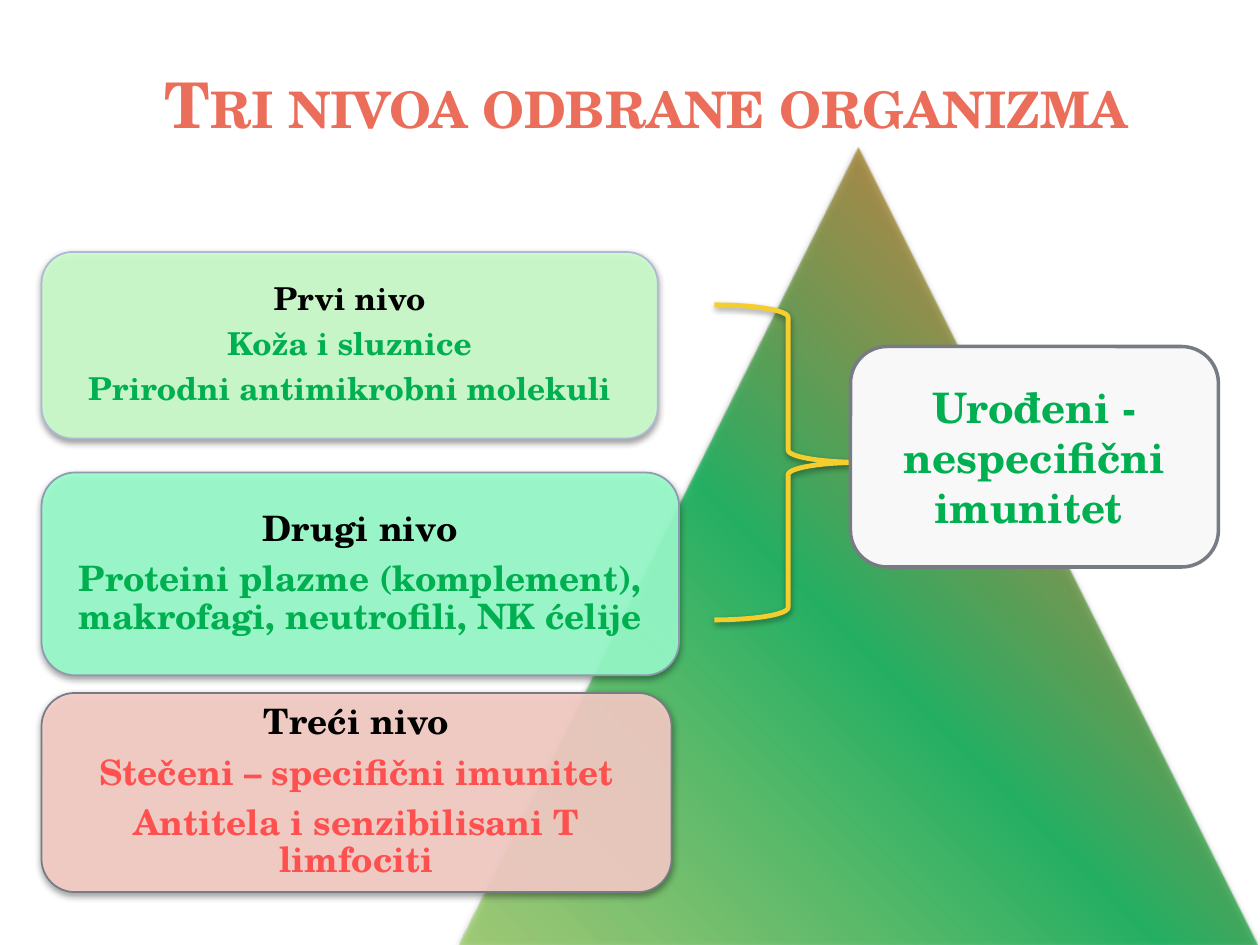
import pptx
import pptx.util
import pptx.dml.color
import pptx.enum.shapes
import pptx.enum.text
import pptx.oxml
import pptx.oxml.ns
import lxml.etree

Inches = pptx.util.Inches
Pt = pptx.util.Pt
SHAPES = pptx.enum.shapes.MSO_SHAPE
ALIGN = pptx.enum.text.PP_ALIGN
ANCHOR = pptx.enum.text.MSO_ANCHOR
qn = pptx.oxml.ns.qn
FONT = "TeX Gyre Schola"
GREEN = "00B050"


def color(value):
    return pptx.dml.color.RGBColor.from_string(value)


def add_shadow(shape):
    shape.shadow.inherit = False
    effects = shape._element.spPr.find(qn("a:effectLst"))
    shadow = lxml.etree.SubElement(
        effects, qn("a:outerShdw"), blurRad=str(Pt(4)), dist=str(Pt(1.6)),
        dir="5400000", rotWithShape="0")
    black = lxml.etree.SubElement(shadow, qn("a:srgbClr"), val="000000")
    lxml.etree.SubElement(black, qn("a:alpha"), val="42000")


deck = pptx.Presentation()
deck.slide_width = Inches(10)
deck.slide_height = Inches(7.5)
page = deck.slides.add_slide(deck.slide_layouts[6])
shapes = page.shapes

# Triangle with a radial gradient from its lower left corner
triangle = shapes.add_shape(SHAPES.ISOSCELES_TRIANGLE, Inches(3.65), Inches(1.17),
                            Inches(6.33), Inches(6.33))
stops = [(0, "92D050", 64), (44, GREEN, 78), (89, "E75C01", 65), (100, "C00000", 72)]
stop_xml = "".join(
    f'<a:gs pos="{position * 1000}"><a:srgbClr val="{value}">'
    f'<a:alpha val="{alpha * 1000}"/></a:srgbClr></a:gs>'
    for position, value, alpha in stops)
gradient = pptx.oxml.parse_xml(
    f'<a:gradFill {pptx.oxml.ns.nsdecls("a")} rotWithShape="1"><a:gsLst>{stop_xml}</a:gsLst>'
    '<a:path path="circle"><a:fillToRect t="100000" r="100000"/></a:path></a:gradFill>')
triangle._element.spPr.find(qn("a:prstGeom")).addnext(gradient)
triangle.line.fill.background()
add_shadow(triangle)

# Three levels: top, width, height, fill, line, text size, text colour, lines
levels = [
    (2, 4.89, 1.48, "CCFFCC", "AEBAD5", 18, GREEN,
     ["Prvi nivo", "Koža i sluznice", "Prirodni antimikrobni molekuli"]),
    (3.75, 5.06, 1.61, "99FFCC", "8E9AB1", 20, GREEN,
     ["Drugi nivo", "Proteini plazme (komplement), makrofagi, neutrofili, NK ćelije"]),
    (5.5, 5, 1.58, "F8CFC8", "777C84", 20, "FF5050",
     ["Treći nivo", "Stečeni – specifični imunitet", "Antitela i senzibilisani T limfociti"]),
]
left, margin = 0.33, 0.08
for top, width, height, fill, line, size, text_color, lines in levels:
    card = shapes.add_shape(SHAPES.ROUNDED_RECTANGLE, Inches(left), Inches(top),
                            Inches(width), Inches(height))
    card.fill.solid()
    card.fill.fore_color.rgb = color(fill)
    fill_color = card._element.spPr.find(qn("a:solidFill")).find(qn("a:srgbClr"))
    lxml.etree.SubElement(fill_color, qn("a:alpha"), val="90000")
    card.line.color.rgb = color(line)
    card.line.width = Pt(1)
    add_shadow(card)

    box = shapes.add_textbox(Inches(left + margin), Inches(top + margin),
                             Inches(width - 2 * margin), Inches(height - 2 * margin))
    frame = box.text_frame
    frame.word_wrap = True
    frame.vertical_anchor = ANCHOR.MIDDLE
    frame.margin_left = frame.margin_right = Pt(size * 0.3)
    frame.margin_top = frame.margin_bottom = Pt(size * 0.3)
    frame.text = "\n".join(lines)
    for index, para in enumerate(frame.paragraphs):
        para.alignment = ALIGN.CENTER
        para.line_spacing = 0.9
        para.space_after = Pt(size * 0.35)
        span = para.runs[0]
        span.font.name = FONT
        span.font.size = Pt(size)
        span.font.bold = True
        span.font.color.rgb = color(text_color if index else "000000")

# Title in small capitals
title = shapes.add_textbox(Inches(1.21), Inches(0.17), Inches(8.25), Inches(1))
title.text_frame.word_wrap = True
title.text_frame.vertical_anchor = ANCHOR.BOTTOM
title.text_frame.text = "Tri nivoa odbrane organizma"
span = title.text_frame.paragraphs[0].runs[0]
span.font.name = FONT
span.font.size = Pt(36)
span.font.bold = True
span.font.color.rgb = color("EB6E5A")
span.font._element.set("cap", "small")

# Brace joining the first two levels
brace = shapes.add_shape(SHAPES.RIGHT_BRACE, Inches(5.67), Inches(2.42),
                         Inches(1.17), Inches(2.5))
brace.fill.background()
brace.line.color.rgb = color("F5CD2D")
brace.line.width = Pt(2.75)
add_shadow(brace)

# Innate immunity label
label = shapes.add_shape(SHAPES.ROUNDED_RECTANGLE, Inches(6.75), Inches(2.75),
                         Inches(2.92), Inches(1.75))
label.shadow.inherit = False
label.fill.solid()
label.fill.fore_color.rgb = color("F8F8F8")
label.line.color.rgb = color("777C84")
label.line.width = Pt(2)
label.text_frame.word_wrap = True
label.text_frame.vertical_anchor = ANCHOR.MIDDLE
label.text_frame.text = "Urođeni - nespecifični imunitet "
para = label.text_frame.paragraphs[0]
para.alignment = ALIGN.CENTER
span = para.runs[0]
span.font.name = FONT
span.font.size = Pt(24)
span.font.bold = True
span.font.color.rgb = color(GREEN)

deck.save("out.pptx")
